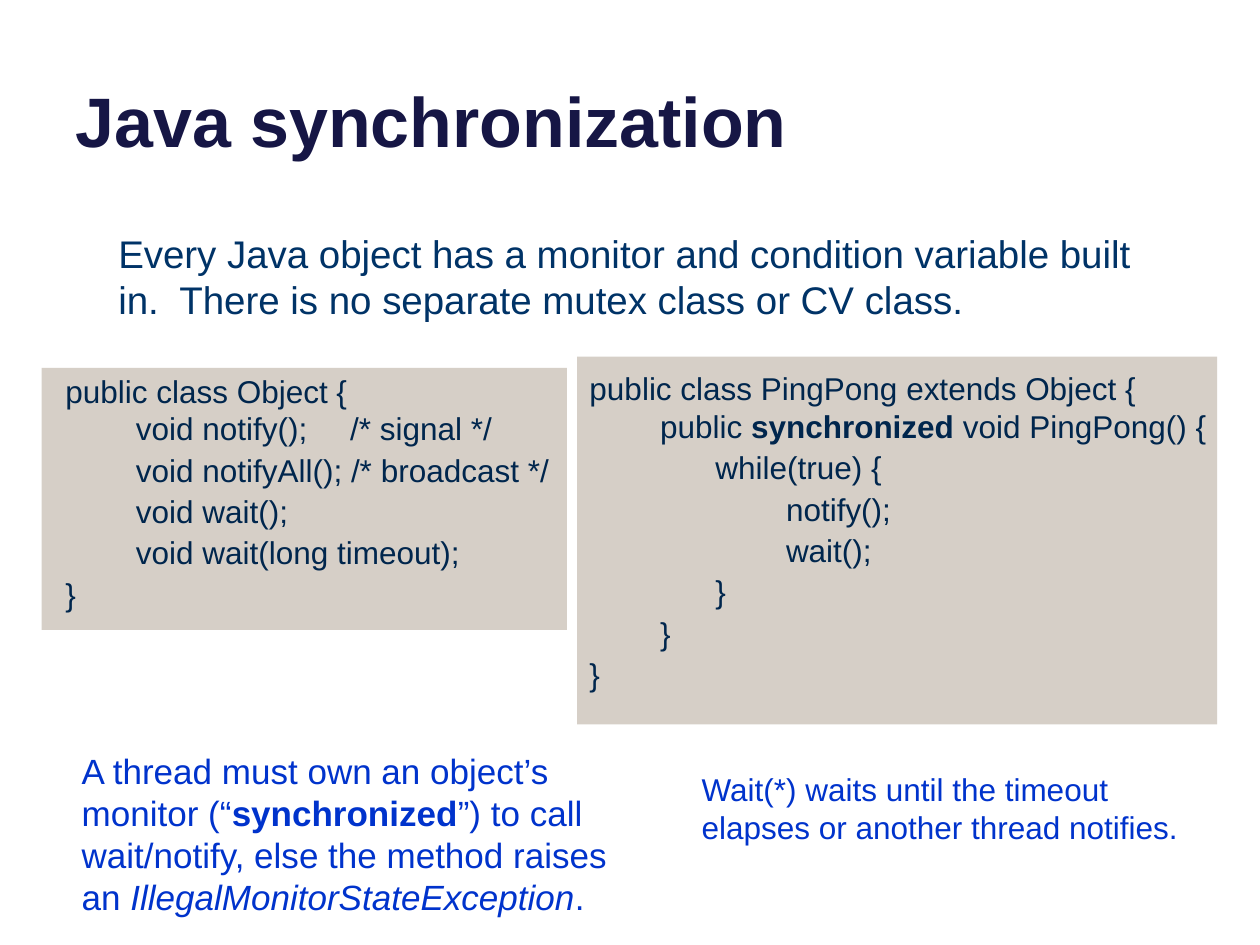
from pptx import Presentation
from pptx.dml.color import RGBColor
from pptx.enum.shapes import MSO_SHAPE
from pptx.enum.text import MSO_ANCHOR
from pptx.oxml.xmlchemy import OxmlElement
from pptx.util import Inches, Pt

RECT = MSO_SHAPE.RECTANGLE
MIDDLE, BOTTOM = MSO_ANCHOR.MIDDLE, MSO_ANCHOR.BOTTOM

FONT = "Arial"
NAVY, CODE, TEAL, BLUE, PANEL = "161645", "00264D", "003367", "0033CC", "D6CFC7"
BOLD, ITALIC = {"bold": True}, {"italic": True}
CODE_STOPS = [0.56, 1.0, 1.56, 2.26]

PANELS = [(4.58, 2.83, 5.08, 2.92), (0.33, 2.92, 4.17, 2.08)]

OBJECT_CODE = [
    "public class Object {",
    "\tvoid notify();\t/* signal */",
    "\tvoid notifyAll(); /* broadcast */",
    "\tvoid wait();",
    "\tvoid wait(long timeout);",
    "}",
]
PINGPONG_CODE = [
    "public class PingPong extends Object {",
    ["\tpublic ", ("synchronized", BOLD), " void PingPong() {"],
    "\t\twhile(true) {",
    "\t\t\tnotify();",
    "\t\t\twait();",
    "\t\t}",
    "\t}",
    "}",
]
INTRO = ["Every Java object has a monitor and condition variable built in.  "
         "There is no separate mutex class or CV class."]
OWNER_NOTE = [[
    "A thread must own an object’s monitor (“",
    ("synchronized", BOLD),
    "”) to call wait/notify, else the method raises an ",
    ("IllegalMonitorStateException", ITALIC),
    ".",
]]
WAIT_NOTE = ["Wait(*) waits until the timeout elapses or another thread notifies."]

TEXTS = [
    ((0.5, -0.37, 9, 1.7), [[("Java synchronization", BOLD)]], 40, NAVY, BOTTOM, []),
    ((0.42, 2.89, 4.48, 2.03), OBJECT_CODE, 18, CODE, MIDDLE, CODE_STOPS),
    ((4.58, 2.87, 5.25, 2.69), PINGPONG_CODE, 18, CODE, MIDDLE, CODE_STOPS),
    ((0.84, 1.77, 8.25, 0.84), INTRO, 22, TEAL, MIDDLE, []),
    ((0.55, 5.89, 4.61, 1.45), OWNER_NOTE, 20, BLUE, MIDDLE, []),
    ((5.47, 6.06, 4.28, 0.71), WAIT_NOTE, 18, BLUE, MIDDLE, []),
]


def rgb(value):
    return RGBColor.from_string(value)


def add_panel(s, box):
    sp = s.shapes.add_shape(RECT, *map(Inches, box))
    sp.shadow.inherit = False
    sp.fill.solid()
    sp.fill.fore_color.rgb = rgb(PANEL)
    sp.line.fill.background()


def set_tabs(p, stops):
    tabs = OxmlElement("a:tabLst")
    for stop in stops:
        tab = OxmlElement("a:tab")
        tab.set("pos", str(Inches(stop)))
        tab.set("algn", "l")
        tabs.append(tab)
    p._p.get_or_add_pPr().append(tabs)


def add_text(s, box, lines, size, color, anchor, stops):
    tf = s.shapes.add_textbox(*map(Inches, box)).text_frame
    tf.word_wrap = True
    tf.vertical_anchor = anchor
    for i, line in enumerate(lines):
        p = tf.add_paragraph() if i else tf.paragraphs[0]
        p.space_after = Pt(2 if i else 0)
        if stops:
            set_tabs(p, stops)
        for part in [line] if isinstance(line, str) else line:
            text, style = (part, {}) if isinstance(part, str) else part
            r = p.add_run()
            r.text = text
            for name, value in {"name": FONT, "size": Pt(size), **style}.items():
                setattr(r.font, name, value)
            r.font.color.rgb = rgb(color)


def main():
    prs = Presentation()
    prs.slide_width, prs.slide_height = Inches(10), Inches(7.5)
    s = prs.slides.add_slide(prs.slide_layouts[6])
    for box in PANELS:
        add_panel(s, box)
    for spec_row in TEXTS:
        add_text(s, *spec_row)
    prs.save("out.pptx")


if __name__ == "__main__":
    main()
